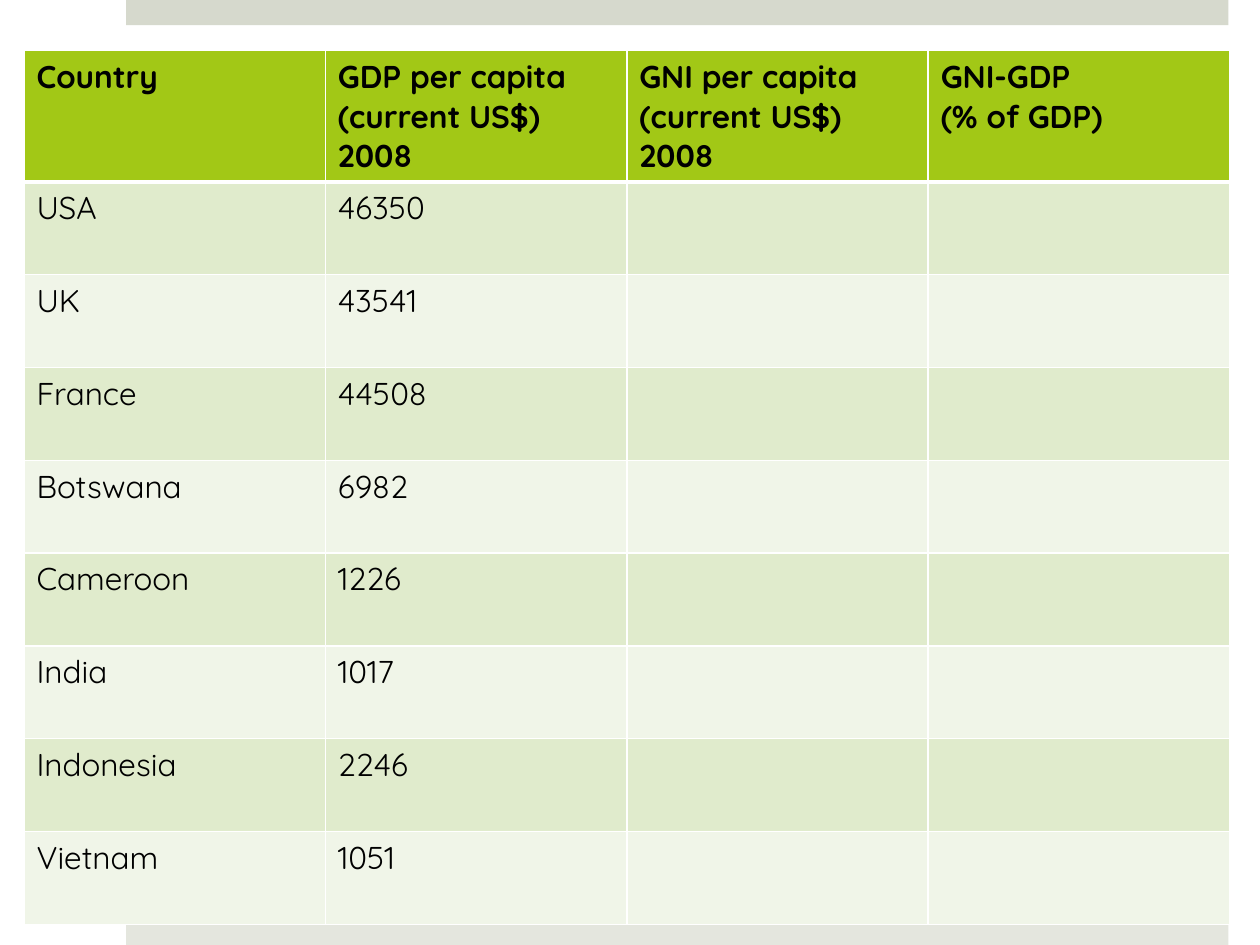
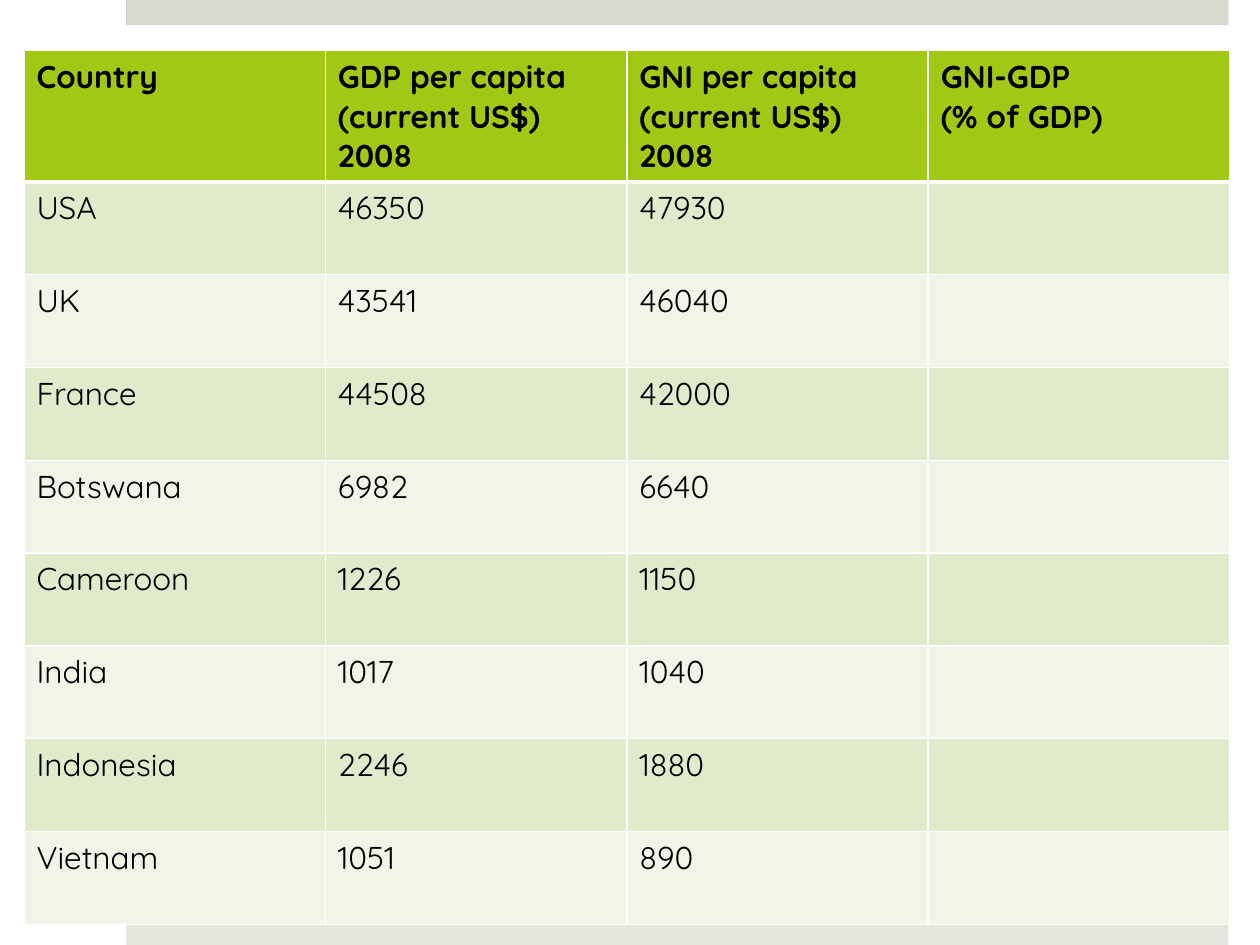
from lxml.etree import SubElement
from pptx import Presentation
from pptx.dml.color import RGBColor
from pptx.enum.shapes import MSO_SHAPE
from pptx.oxml.ns import qn
from pptx.util import Pt

FONT = "Quicksand"
BLACK = RGBColor(0x00, 0x00, 0x00)
WHITE = RGBColor(0xFF, 0xFF, 0xFF)
GREEN = RGBColor(0xA2, 0xC8, 0x16)
BAND_DARK = RGBColor(0xE0, 0xEB, 0xCC)
BAND_LIGHT = RGBColor(0xF0, 0xF5, 0xE8)
TOP_GREY = RGBColor(0xD6, 0xD9, 0xCD)
BOTTOM_GREY = RGBColor(0xE4, 0xE6, 0xDE)

HEADERS = [
    "Country",
    "GDP per capita (current US$) 2008",
    "GNI per capita (current US$) 2008",
    "GNI-GDP\n(% of GDP)",
]
# Country, GDP per capita, GNI per capita
INCOMES = [
    ("USA", 46350, 47930),
    ("UK", 43541, 46040),
    ("France", 44508, 42000),
    ("Botswana", 6982, 6640),
    ("Cameroon", 1226, 1150),
    ("India", 1017, 1040),
    ("Indonesia", 2246, 1880),
    ("Vietnam", 1051, 890),
]


class Deck:
    def __init__(self):
        self.prs = Presentation()
        self.prs.slide_width, self.prs.slide_height = Pt(720), Pt(540)
        self.slide = None

    def new_slide(self):
        self.slide = self.prs.slides.add_slide(self.prs.slide_layouts[6])
        self.bar(0, TOP_GREY)
        self.bar(525.6, BOTTOM_GREY)

    def bar(self, top, color):
        sp = self.slide.shapes.add_shape(
            MSO_SHAPE.RECTANGLE, Pt(72), Pt(top), Pt(630), Pt(14.4))
        sp.shadow.inherit = False
        sp.fill.solid()
        sp.fill.fore_color.rgb = color
        sp.line.fill.background()

    def border(self, cell, side, width):
        tc_pr = cell._tc.get_or_add_tcPr()
        ln = SubElement(tc_pr, qn(f"a:ln{side}"), w=str(Pt(width)))
        fill = SubElement(ln, qn("a:solidFill"))
        SubElement(fill, qn("a:srgbClr"), val=str(WHITE))

    def cell(self, cell, text, fill, bold=False, top=1, bottom=1):
        for side, width in zip("LRTB", (1, 1, top, bottom)):
            self.border(cell, side, width)
        cell.fill.solid()
        cell.fill.fore_color.rgb = fill
        cell.text_frame.text = text
        for p in cell.text_frame.paragraphs:
            for r in p.runs:
                r.font.name = FONT
                r.font.size = Pt(18)
                r.font.bold = bold
                r.font.color.rgb = BLACK

    def table(self, headers, rows):
        table = self.slide.shapes.add_table(
            len(rows) + 1, len(headers),
            Pt(13.7), Pt(29), Pt(689), Pt(477.4)).table
        table.first_row = table.horz_banding = False
        for row in table.rows:
            row.height = Pt(53.04)
        for col, text in enumerate(headers):
            self.cell(table.cell(0, col), text, GREEN, bold=True, bottom=3)
        for i, row in enumerate(rows, 1):
            fill = BAND_DARK if i % 2 else BAND_LIGHT
            for col, text in enumerate(row):
                self.cell(table.cell(i, col), text, fill, top=3 if i == 1 else 1)


def main():
    deck = Deck()

    # First GDP alone, then GNI beside it; the difference stays open
    for show_gni in (False, True):
        deck.new_slide()
        rows = [(country, str(gdp), str(gni) if show_gni else "", "")
                for country, gdp, gni in INCOMES]
        deck.table(HEADERS, rows)

    deck.prs.save("out.pptx")


if __name__ == "__main__":
    main()
